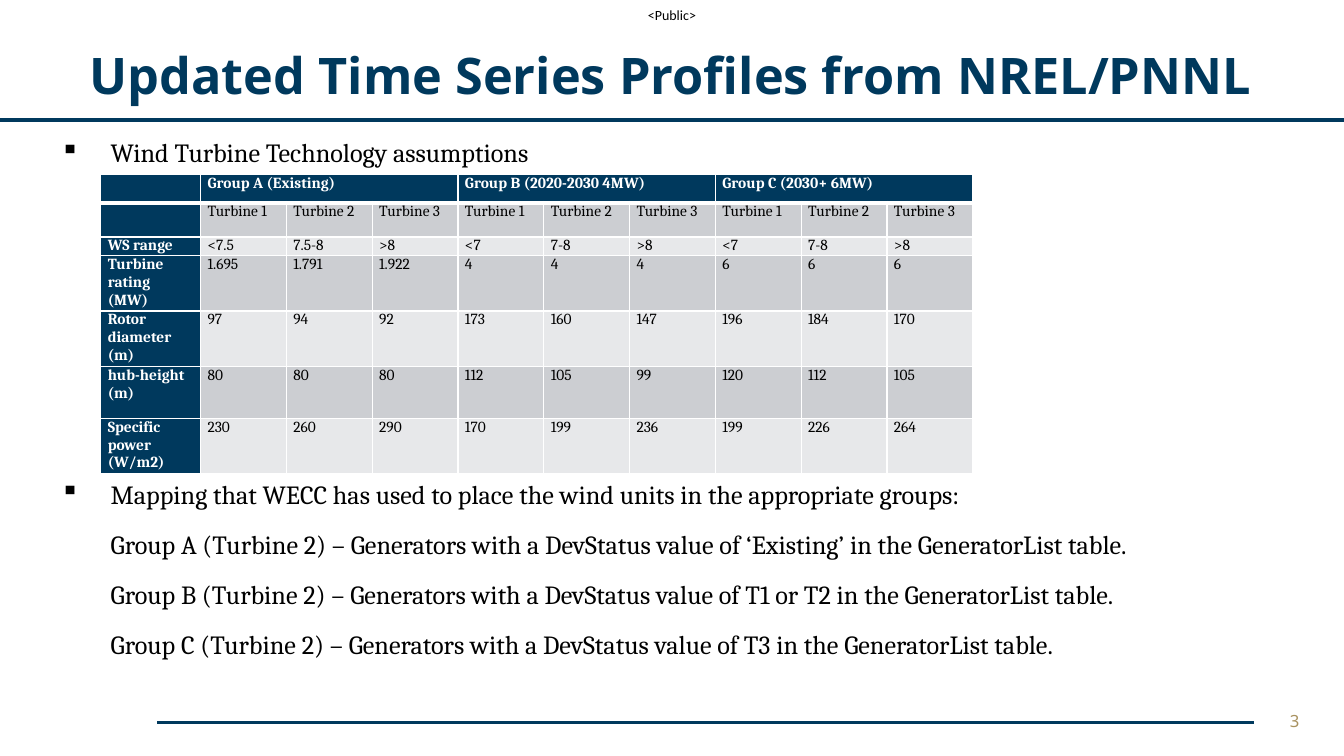
from lxml import etree
from pptx import Presentation
from pptx.dml.color import RGBColor
from pptx.enum.shapes import MSO_CONNECTOR
from pptx.enum.text import MSO_ANCHOR, PP_ALIGN
from pptx.oxml.ns import qn
from pptx.util import Pt

LEFT, CENTER, RIGHT = PP_ALIGN.LEFT, PP_ALIGN.CENTER, PP_ALIGN.RIGHT
TOP, MIDDLE = MSO_ANCHOR.TOP, MSO_ANCHOR.MIDDLE
STRAIGHT = MSO_CONNECTOR.STRAIGHT

COLORS = {"navy": "00395D", "gold": "A99260", "black": "000000",
          "white": "FFFFFF", "dark band": "CCCED2", "light band": "E7E8EA"}

TITLE = "Updated Time Series Profiles from NREL/PNNL"
MARKING = "<Public>"
PAGE_NUMBER = "3"
ASSUMPTIONS = [("▪", "Wind Turbine Technology assumptions")]
MAPPING = [
    ("▪", "Mapping that WECC has used to place the wind units in the appropriate groups:"),
    ("", "Group A (Turbine 2) – Generators with a DevStatus value of ‘Existing’ in the GeneratorList table."),
    ("", "Group B (Turbine 2) – Generators with a DevStatus value of T1 or T2 in the GeneratorList table."),
    ("", "Group C (Turbine 2) – Generators with a DevStatus value of T3 in the GeneratorList table."),
]
GROUPS = ["Group A (Existing)", "Group B (2020-2030 4MW)", "Group C (2030+ 6MW)"]
TURBINES = ["Turbine 1", "Turbine 2", "Turbine 3"]
MEASURES = [
    ("WS range", ["<7.5", "7.5-8", ">8", "<7", "7-8", ">8", "<7", "7-8", ">8"]),
    ("Turbine rating (MW)", ["1.695", "1.791", "1.922", "4", "4", "4", "6", "6", "6"]),
    ("Rotor diameter (m)", ["97", "94", "92", "173", "160", "147", "196", "184", "170"]),
    ("hub-height (m)", ["80", "80", "80", "112", "105", "99", "120", "112", "105"]),
    ("Specific power (W/m2)", ["230", "260", "290", "170", "199", "236", "199", "226", "264"]),
]
ROW_HEIGHTS = [20, 24.5, 12.5, 38.3, 38.3, 37, 37]
LABEL_WIDTH, VALUE_WIDTH = 71.3, 61.3
RULES = [(0, 960, 85.7), (112.3, 895.7, 516.2)]


def rgb(color):
    return RGBColor.from_string(COLORS[color])


def style(paragraph, face, size, color, bold=False, align=LEFT):
    paragraph.alignment = align
    font = paragraph.font
    font.name, font.size, font.bold = face, Pt(size), bold
    font.color.rgb = rgb(color)


def add_box(left, top, width, height, anchor=TOP):
    frame = slide.shapes.add_textbox(Pt(left), Pt(top), Pt(width), Pt(height)).text_frame
    frame.word_wrap = True
    frame.vertical_anchor = anchor
    return frame


def add_points(points, top, height):
    frame = add_box(36, top, 885.6, height)
    for index, (mark, text) in enumerate(points):
        point = frame.paragraphs[0] if index == 0 else frame.add_paragraph()
        point.text = text
        point.line_spacing = 1.04
        point.space_after = Pt(6.5)
        if index:
            point.space_before = Pt(6)
        properties = point._p.get_or_add_pPr()
        properties.set("marL", str(Pt(36)))
        properties.set("indent", str(Pt(-36 if mark else 0)))
        if mark:
            etree.SubElement(properties, qn("a:buChar")).set("char", mark)
        else:
            etree.SubElement(properties, qn("a:buNone"))
        style(point, "Cambria", 18.7, "black")


def set_borders(cell, widths):
    properties = cell._tc.get_or_add_tcPr()
    for position, (side, width) in enumerate(widths.items()):
        border = etree.Element(qn("a:" + side), w=str(Pt(width)))
        fill = etree.SubElement(border, qn("a:solidFill"))
        etree.SubElement(fill, qn("a:srgbClr")).set("val", COLORS["white"])
        properties.insert(position, border)


presentation = Presentation()
presentation.slide_width, presentation.slide_height = Pt(960), Pt(540)
slide = presentation.slides.add_slide(presentation.slide_layouts[5])

title = slide.shapes.title
title.left, title.top, title.width, title.height = Pt(36), Pt(28.8), Pt(885.6), Pt(54)
title.text_frame.text = TITLE
title.text_frame.vertical_anchor = MIDDLE
title.text_frame.paragraphs[0].line_spacing = 0.9
style(title.text_frame.paragraphs[0], "Noto Sans", 36, "navy", True, CENTER)

marking = add_box(440, 0, 80, 21, MIDDLE)
marking.text = MARKING
style(marking.paragraphs[0], "Calibri", 10, "black", align=CENTER)

page_number = add_box(707.8, 500.4, 227.5, 28.8, MIDDLE)
page_number.text = PAGE_NUMBER
style(page_number.paragraphs[0], "Noto Sans", 12, "gold", align=RIGHT)

for start, end, y in RULES:
    rule = slide.shapes.add_connector(STRAIGHT, Pt(start), Pt(y), Pt(end), Pt(y))
    rule.line.color.rgb = rgb("navy")
    rule.line.width = Pt(2.25)
    etree.SubElement(rule._element.spPr, qn("a:effectLst"))

add_points(ASSUMPTIONS, 92.9, 32)
add_points(MAPPING, 337, 150)

group_row = [""] + [text for group in GROUPS for text in (group, "", "")]
rows = [group_row, [""] + TURBINES * len(GROUPS)]
rows += [[label] + values for label, values in MEASURES]
column_count = len(group_row)
turbines = slide.shapes.add_table(
    len(rows), column_count, Pt(72), Pt(124.8),
    Pt(LABEL_WIDTH + VALUE_WIDTH * (column_count - 1)), Pt(sum(ROW_HEIGHTS))).table
for index, column in enumerate(turbines.columns):
    column.width = Pt(VALUE_WIDTH if index else LABEL_WIDTH)
for row, height in zip(turbines.rows, ROW_HEIGHTS):
    row.height = Pt(height)
for first in range(1, column_count, len(TURBINES)):
    turbines.cell(0, first).merge(turbines.cell(0, first + len(TURBINES) - 1))

for r, texts in enumerate(rows):
    for c, text in enumerate(texts):
        cell = turbines.cell(r, c)
        heading = r == 0 or c == 0
        band = "dark band" if r % 2 else "light band"
        cell.margin_left = cell.margin_right = Pt(5)
        cell.margin_top = cell.margin_bottom = 0
        cell.fill.solid()
        cell.fill.fore_color.rgb = rgb("navy" if heading else band)
        set_borders(cell, {"lnL": 1, "lnR": 1, "lnT": 3 if r == 1 else 1,
                           "lnB": 3 if r == 0 else 1})
        if text:
            cell.text = text
        style(cell.text_frame.paragraphs[0], "Cambria", 11,
              "white" if heading else "black", heading)

presentation.save("out.pptx")
